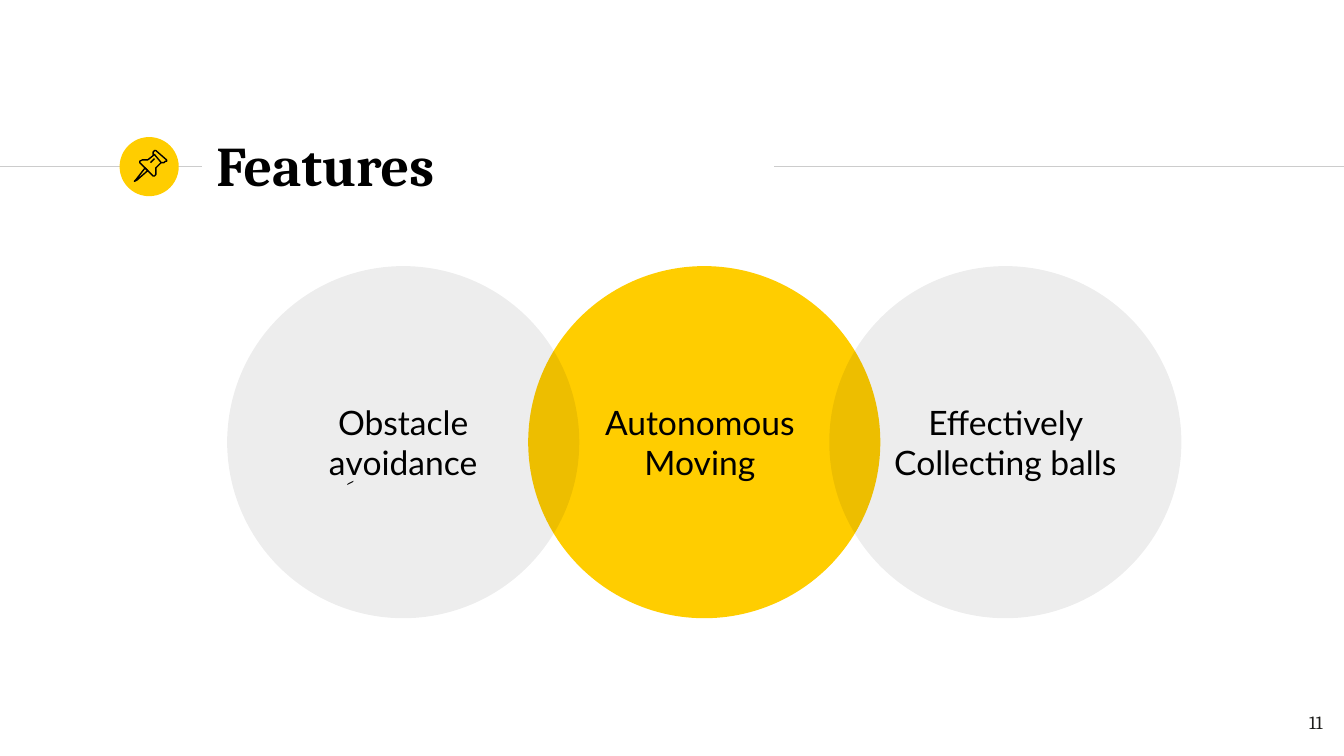
from lxml import etree
from pptx import Presentation
from pptx.dml.color import RGBColor
from pptx.enum.shapes import MSO_CONNECTOR, MSO_SHAPE
from pptx.enum.text import MSO_ANCHOR, MSO_AUTO_SIZE, PP_ALIGN
from pptx.oxml.ns import qn
from pptx.util import Inches, Pt

COLORS = {"yellow": "FFCD00", "rule": "CCCCCC", "black": "000000", "number": "1D1D1B"}
TITLE = "Features"
PAGE_NUMBER = "11"
FEATURES = [
    ("Autonomous \nMoving ", 1, "yellow", None),
    ("Obstacle aِvoidance", 0, "black", 7),
    ("Effectively Collecting balls", 2, "black", 7),
]
SLIDE_WIDTH = 10
SLIDE_HEIGHT = SLIDE_WIDTH * 9 / 16
CIRCLE_LEFT, CIRCLE_TOP, CIRCLE_SIZE, CIRCLE_STEP = 1.69, 1.98, 2.62, 2.24
RULE_Y = 1.24
RULES = [(0, 1.5), (5.76, SLIDE_WIDTH)]
PIN_OUTLINES = [
    ([(1.08, 1.25), (1.01, 1.34), (1, 1.35), (1.02, 1.34), (1.1, 1.27)], True),
    ([(1.15, 1.15), (1.2, 1.21), (1.22, 1.21), (1.23, 1.2), (1.24, 1.2),
      (1.24, 1.19), (1.16, 1.12), (1.15, 1.12), (1.14, 1.13), (1.14, 1.15)], True),
    ([(1.15, 1.15), (1.1, 1.19), (1.08, 1.19), (1.06, 1.19), (1.04, 1.2),
      (1.04, 1.21), (1.14, 1.31), (1.15, 1.31), (1.16, 1.3), (1.16, 1.28),
      (1.16, 1.25), (1.2, 1.21)], False),
    ([(1.12, 1.21), (1.15, 1.18)], False),
]


def rgb(name):
    return RGBColor.from_string(COLORS[name])


def write(frame, text, font, size, color, align, anchor, bold=False):
    frame.word_wrap = True
    frame.auto_size = MSO_AUTO_SIZE.NONE
    frame.vertical_anchor = anchor
    frame.margin_left = frame.margin_right = Inches(0.1)
    frame.margin_top = frame.margin_bottom = Inches(0.1)
    paragraph = frame.paragraphs[0]
    paragraph.text = text
    paragraph.alignment = align
    paragraph.font.name = font
    paragraph.font.size = Pt(size)
    paragraph.font.bold = bold
    paragraph.font.color.rgb = rgb(color)


def add_circle(slide, left, top, size, color, opacity=None):
    circle = slide.shapes.add_shape(
        MSO_SHAPE.OVAL, Inches(left), Inches(top), Inches(size), Inches(size))
    circle.shadow.inherit = False
    circle.fill.solid()
    circle.fill.fore_color.rgb = rgb(color)
    circle.line.fill.background()
    if opacity is not None:
        fill_color = circle._element.spPr.find(qn("a:solidFill"))[0]
        etree.SubElement(fill_color, qn("a:alpha")).set("val", str(opacity * 1000))
    return circle


def add_rule(slide, start, end):
    rule = slide.shapes.add_connector(
        MSO_CONNECTOR.STRAIGHT, Inches(start), Inches(RULE_Y), Inches(end), Inches(RULE_Y))
    rule.line.color.rgb = rgb("rule")
    rule.line.width = Pt(0.75)
    etree.SubElement(rule._element.spPr, qn("a:effectLst"))


def add_pin(slide):
    pin = slide.shapes.add_group_shape()
    for points, closed in PIN_OUTLINES:
        start, *rest = [(Inches(x), Inches(y)) for x, y in points]
        builder = pin.shapes.build_freeform(*start)
        builder.add_line_segments(rest, close=closed)
        outline = builder.convert_to_shape()
        outline.shadow.inherit = False
        outline.fill.background()
        outline.line.color.rgb = rgb("black")
        outline.line.width = Pt(0.75)


def main():
    deck = Presentation()
    deck.slide_width, deck.slide_height = Inches(SLIDE_WIDTH), Inches(SLIDE_HEIGHT)
    slide = deck.slides.add_slide(deck.slide_layouts[5])

    for start, end in RULES:
        add_rule(slide, start, end)
    add_circle(slide, 0.89, 1.02, 0.44, "yellow")

    title = slide.shapes.title
    title.left, title.top = Inches(1.51), Inches(0.98)
    title.width, title.height = Inches(4.24), Inches(0.48)
    write(title.text_frame, TITLE, "Cambria", 30, "black",
          PP_ALIGN.LEFT, MSO_ANCHOR.MIDDLE, bold=True)

    for label, column, color, opacity in FEATURES:
        feature = add_circle(slide, CIRCLE_LEFT + column * CIRCLE_STEP,
                             CIRCLE_TOP, CIRCLE_SIZE, color, opacity)
        write(feature.text_frame, label, "Lato", 18, "black",
              PP_ALIGN.CENTER, MSO_ANCHOR.MIDDLE)

    add_pin(slide)
    number = slide.shapes.add_textbox(Inches(9.34), Inches(5.19), Inches(0.6), Inches(0.43))
    write(number.text_frame, PAGE_NUMBER, "Cambria", 10, "number",
          PP_ALIGN.RIGHT, MSO_ANCHOR.TOP)
    deck.save("out.pptx")


if __name__ == "__main__":
    main()
